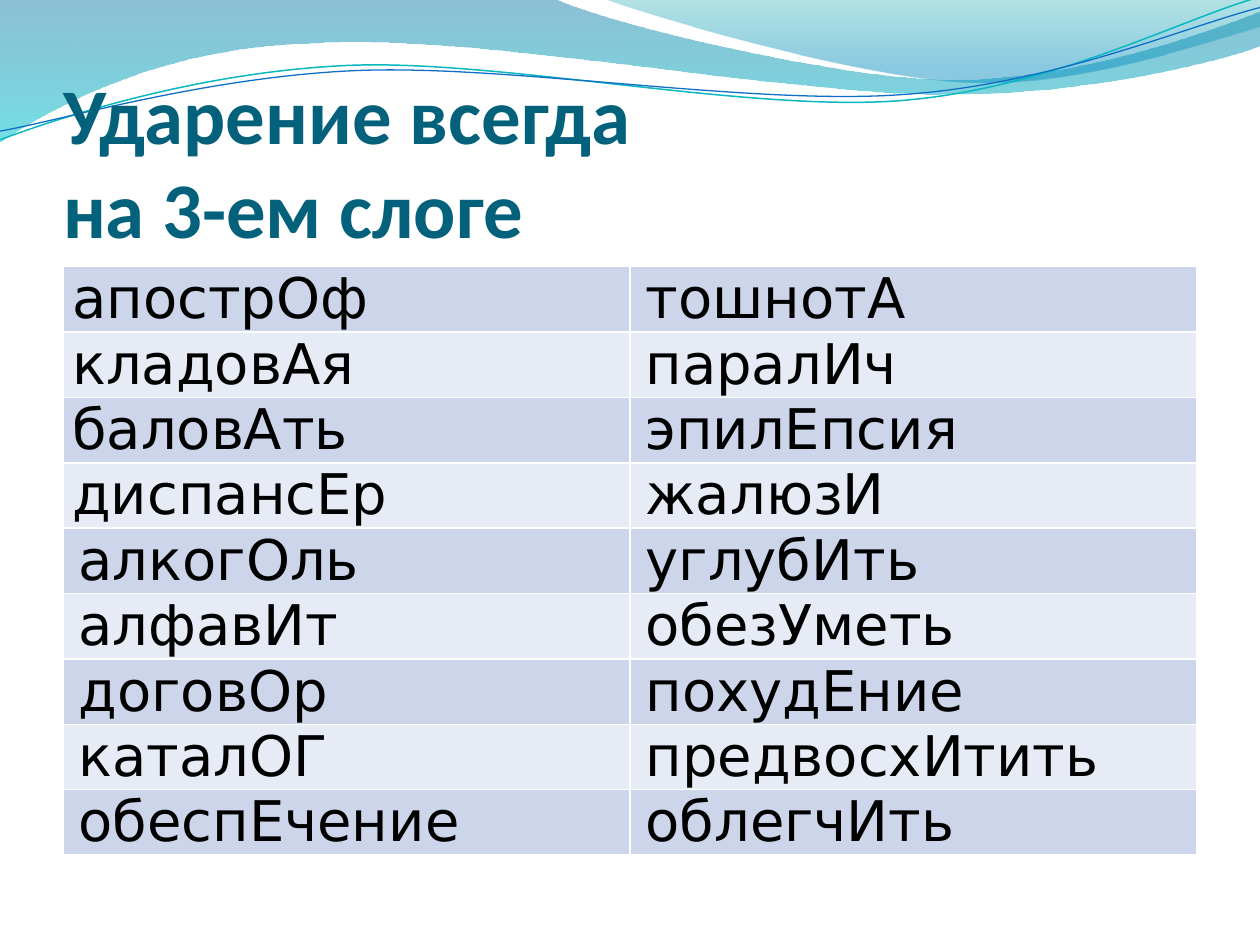
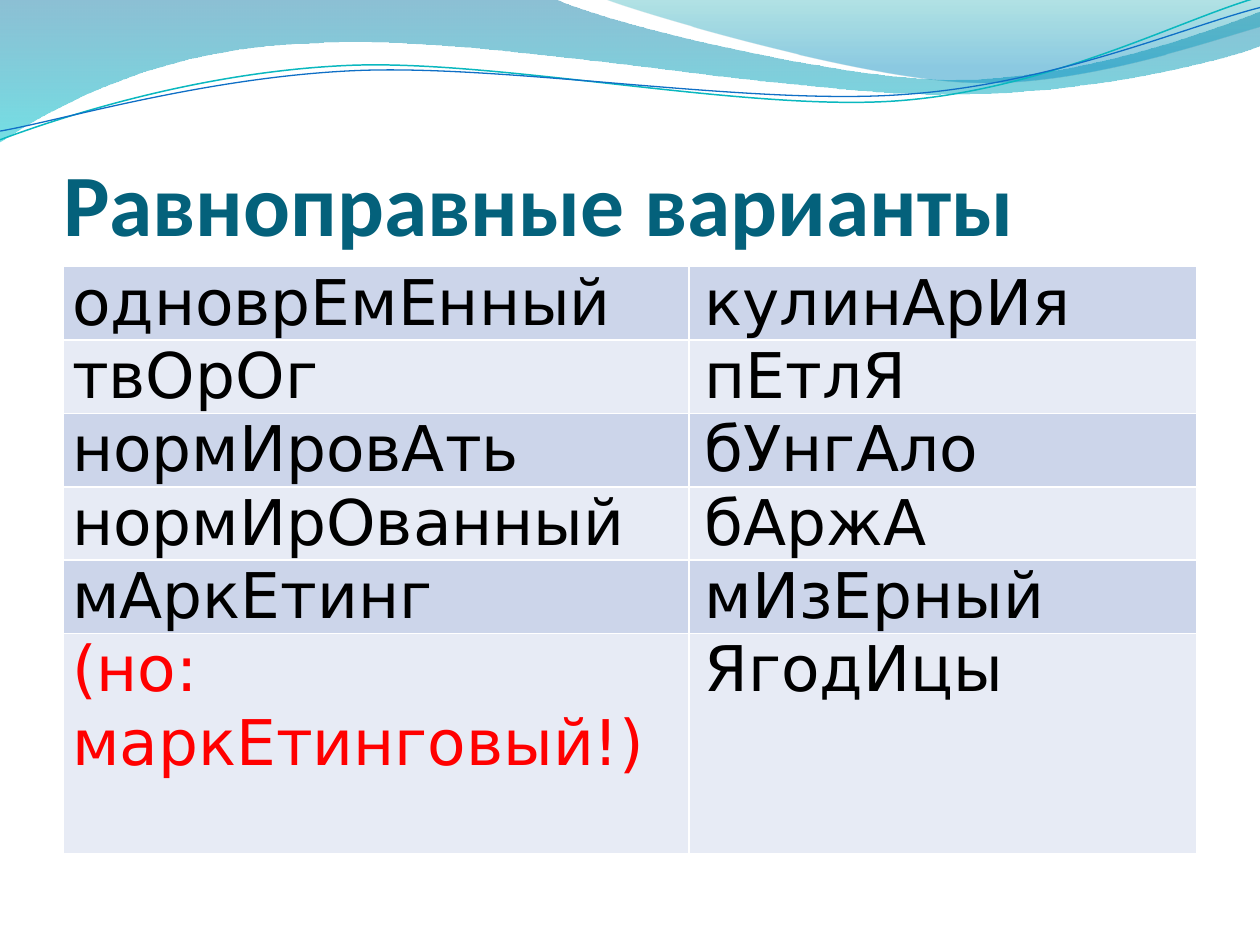
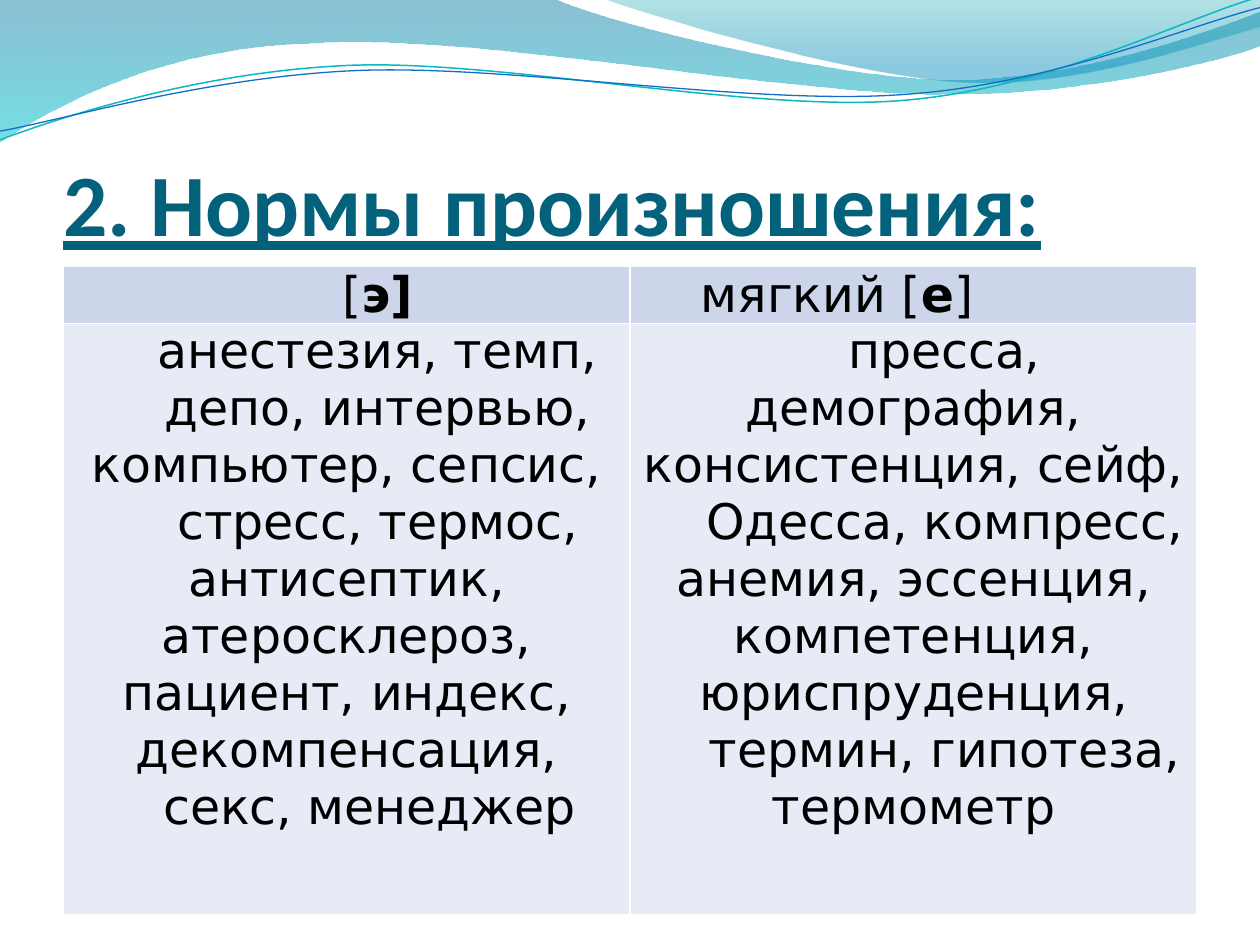
import pptx
import pptx.util
import pptx.dml.color
import pptx.enum.text
import pptx.oxml
import pptx.oxml.ns
import lxml.etree

Pt = pptx.util.Pt
qn = pptx.oxml.ns.qn
ALIGN = pptx.enum.text.PP_ALIGN

TITLE_FONT, TITLE_COLOR = "Calibri", "04617B"
BODY_FONT, TEXT_COLOR, ACCENT_COLOR = "DejaVu Sans", "000000", "FF0000"
BAND_COLORS = ["CCD5EA", "E7EBF5"]
BORDER_COLOR = "FFFFFF"
LEFT, WIDTH, TABLE_TOP = 36, 648, 152.4
SMALL_INDENT, LARGE_INDENT = 3.6, 35.3

WIDE_WAVE = [
    (0, 0), (316.8, -0.7),
    (342.7, 12.2, 478, 45.4, 545.8, 45.4),
    (614.2, 45.4, 689.8, 18.7, 720, 6.5), (720.7, 25.9),
    (707.8, 31.7, 626.4, 54.7, 537.1, 54),
    (447.8, 54, 275, 20.2, 185, 24.5),
    (92.9, 25.9, 33.1, 59.8, -0.7, 81.4), (0, 0),
]
RIGHT_WAVE = [
    (344.9, -0.7),
    (366.5, 7.9, 491, 44.6, 553.7, 46.8),
    (616.3, 49.7, 691.9, 23, 720, 15.1), (720, 0), (344.9, -0.7),
]
TEAL_LINE = [
    (0, 79.9),
    (34.6, 67, 113.8, 41, 199.4, 37.4),
    (284.4, 33.8, 427, 64.1, 513.4, 57.6),
    (599.8, 51.1, 675.4, 10.8, 718.6, -1.4),
]
BLUE_LINE = [
    (0, 74.9),
    (33.8, 69.1, 118.1, 43.9, 203.8, 40.3),
    (290.2, 36.7, 429.8, 60.5, 516.2, 54),
    (601.9, 48.2, 677.5, 15.1, 720, 4.3),
]

THIRD_SYLLABLE = [
    ("апострОф", "тошнотА"),
    ("кладовАя", "паралИч"),
    ("баловАть", "эпилЕпсия"),
    ("диспансЕр", "жалюзИ"),
    ("алкогОль", "углубИть"),
    ("алфавИт", "обезУметь"),
    ("договОр", "похудЕние"),
    ("каталОГ", "предвосхИтить"),
    ("обеспЕчение", "облегчИть"),
]
EQUAL_VARIANTS = [
    ("одноврЕмЕнный", "кулинАрИя"),
    ("твОрОг", "пЕтлЯ "),
    ("нормИровАть", "бУнгАло"),
    ("нормИрОванный", "бАржА"),
    ("мАркЕтинг", "мИзЕрный"),
    ("(но: маркЕтинговый!)", "ЯгодИцы"),
]
HARD_SOUND = [
    "анестезия, темп,",
    "депо, интервью, компьютер, сепсис,",
    "стресс, термос, антисептик, атеросклероз, пациент, индекс, декомпенсация,",
    "секс, менеджер ",
]
SOFT_SOUND = [
    "пресса, демография, консистенция, сейф,",
    "Одесса, компресс, анемия, эссенция, компетенция, юриспруденция,",
    "термин, гипотеза, термометр",
]


def rgb(color):
    return pptx.dml.color.RGBColor.from_string(color)


def bend_segments(sp, segments):
    lines = list(sp.element.iter(qn("a:lnTo")))
    for line, segment in zip(lines, segments):
        if len(segment) == 6:
            curve = lxml.etree.Element(qn("a:cubicBezTo"))
            for x, y in zip(segment[::2], segment[1::2]):
                lxml.etree.SubElement(curve, qn("a:pt"), x=str(Pt(x) - sp.left),
                                      y=str(Pt(y) - sp.top))
            line.getparent().replace(line, curve)


def add_outline(s, master, segments, close):
    anchors = [(Pt(segment[-2]), Pt(segment[-1])) for segment in segments]
    builder = s.shapes.build_freeform(*anchors[0], scale=1)
    builder.add_line_segments(anchors[1:], close=close)
    sp = builder.convert_to_shape()
    bend_segments(sp, segments[1:])
    sp.shadow.inherit = False
    master.shapes.element.append(sp.element)
    return sp


def add_wave(s, master, segments, stops):
    sp = add_outline(s, master, segments, True)
    sp.line.fill.background()
    sp.fill.gradient()
    sp.fill.gradient_angle = 270
    for stop, (position, color, _) in zip(sp.fill.gradient_stops, stops):
        stop.position = position
        stop.color.rgb = rgb(color)
    gradient = sp.element.spPr.find(qn("a:gradFill"))
    for clr, (_, _, opacity) in zip(gradient.iter(qn("a:srgbClr")), stops):
        lxml.etree.SubElement(clr, qn("a:alpha")).set("val", str(opacity * 1000))


def add_curve(s, master, segments, color, width):
    sp = add_outline(s, master, segments, False)
    sp.fill.background()
    sp.line.color.rgb = rgb(color)
    sp.line.width = Pt(width)


def decorate(s, master):
    add_wave(s, master, WIDE_WAVE, [(0, "0074A1", 45), (1, "00C6CF", 55)])
    add_wave(s, master, RIGHT_WAVE, [(0, "00A1A9", 30), (0.8, "008BBF", 45)])
    add_curve(s, master, TEAL_LINE, "0AB8BF", 0.85)
    add_curve(s, master, BLUE_LINE, "0F6FC6", 0.75)


def set_font(font, name, size, color):
    font.name = name
    font.size = Pt(size)
    font.color.rgb = rgb(color)


def set_title(s, text, size=50, underline=False):
    sp = s.shapes.title
    sp.left, sp.top, sp.width, sp.height = Pt(LEFT), Pt(55.4), Pt(WIDTH), Pt(90)
    tf = sp.text_frame
    tf.text = text
    tf.word_wrap = True
    tf.auto_size = pptx.enum.text.MSO_AUTO_SIZE.NONE
    tf.vertical_anchor = pptx.enum.text.MSO_ANCHOR.BOTTOM
    tf.margin_left = tf.margin_right = tf.margin_bottom = 0
    tf.margin_top = Pt(3.6)
    p = tf.paragraphs[0]
    p.alignment = ALIGN.LEFT
    set_font(p.font, TITLE_FONT, size, TITLE_COLOR)
    p.font.bold = True
    p.font.underline = underline


def set_borders(cell):
    tcPr = cell._tc.get_or_add_tcPr()
    for side in ("lnL", "lnR", "lnT", "lnB"):
        ln = lxml.etree.SubElement(tcPr, qn("a:" + side), w=str(Pt(1)))
        fill = lxml.etree.SubElement(ln, qn("a:solidFill"))
        lxml.etree.SubElement(fill, qn("a:srgbClr"), val=BORDER_COLOR)


def add_table(s, col_widths, row_heights):
    frame = s.shapes.add_table(len(row_heights), len(col_widths), Pt(LEFT),
                               Pt(TABLE_TOP), Pt(WIDTH), Pt(sum(row_heights)))
    table = frame.table
    table.first_row = table.horz_banding = False
    for col, width in zip(table.columns, col_widths):
        col.width = Pt(width)
    for i, (row, height) in enumerate(zip(table.rows, row_heights)):
        row.height = Pt(height)
        for cell in row.cells:
            cell.margin_left = cell.margin_right = Pt(5.3)
            cell.margin_top = cell.margin_bottom = 0
            set_borders(cell)
            cell.fill.solid()
            cell.fill.fore_color.rgb = rgb(BAND_COLORS[i % 2])
    return table


def fill_cell(cell, lines, size, align=ALIGN.JUSTIFY, indent=0, color=TEXT_COLOR):
    tf = cell.text_frame
    for i, line in enumerate(lines):
        p = tf.add_paragraph() if i else tf.paragraphs[0]
        p.alignment = align
        p._p.get_or_add_pPr().set("indent", str(Pt(indent)))
        set_font(p.font, BODY_FONT, size, color)
        parts = line.split("*")
        for j, part in enumerate(parts):
            if part:
                r = p.add_run()
                r.text = part
                if len(parts) > 1:
                    r.font.bold = j % 2 == 1


def add_word_table(s, words, size, col_widths, row_heights, flush_rows):
    table = add_table(s, col_widths, row_heights)
    for i, row in enumerate(words):
        for j, word in enumerate(row):
            indent = SMALL_INDENT if j or i >= flush_rows else 0
            color = ACCENT_COLOR if word.startswith("(") else TEXT_COLOR
            fill_cell(table.cell(i, j), [word], size, indent=indent, color=color)


def add_sound_table(s):
    table = add_table(s, [324, 324], [32.4, 338])
    cells = [
        (0, 0, ["[*э]*"], ALIGN.CENTER),
        (0, 1, ["мягкий [*е*]"], ALIGN.JUSTIFY),
        (1, 0, HARD_SOUND, ALIGN.CENTER),
        (1, 1, SOFT_SOUND, ALIGN.CENTER),
    ]
    for row, col, lines, align in cells:
        fill_cell(table.cell(row, col), lines, 28, align, LARGE_INDENT)


def main():
    prs = pptx.Presentation()
    prs.slide_width, prs.slide_height = Pt(720), Pt(540)
    layout = prs.slide_layouts[5]

    s = prs.slides.add_slide(layout)
    decorate(s, prs.slide_master)
    set_title(s, "Ударение всегда \vна 3-ем слоге", 45)
    add_word_table(s, THIRD_SYLLABLE, 32, [324, 324], [37.25] * 9, 4)

    s = prs.slides.add_slide(layout)
    set_title(s, "Равноправные варианты")
    add_word_table(s, EQUAL_VARIANTS, 36, [357.8, 290.2], [41.9] * 5 + [125.7], 6)

    s = prs.slides.add_slide(layout)
    set_title(s, "2. Нормы произношения:", underline=True)
    add_sound_table(s)

    prs.save("out.pptx")


if __name__ == "__main__":
    main()
